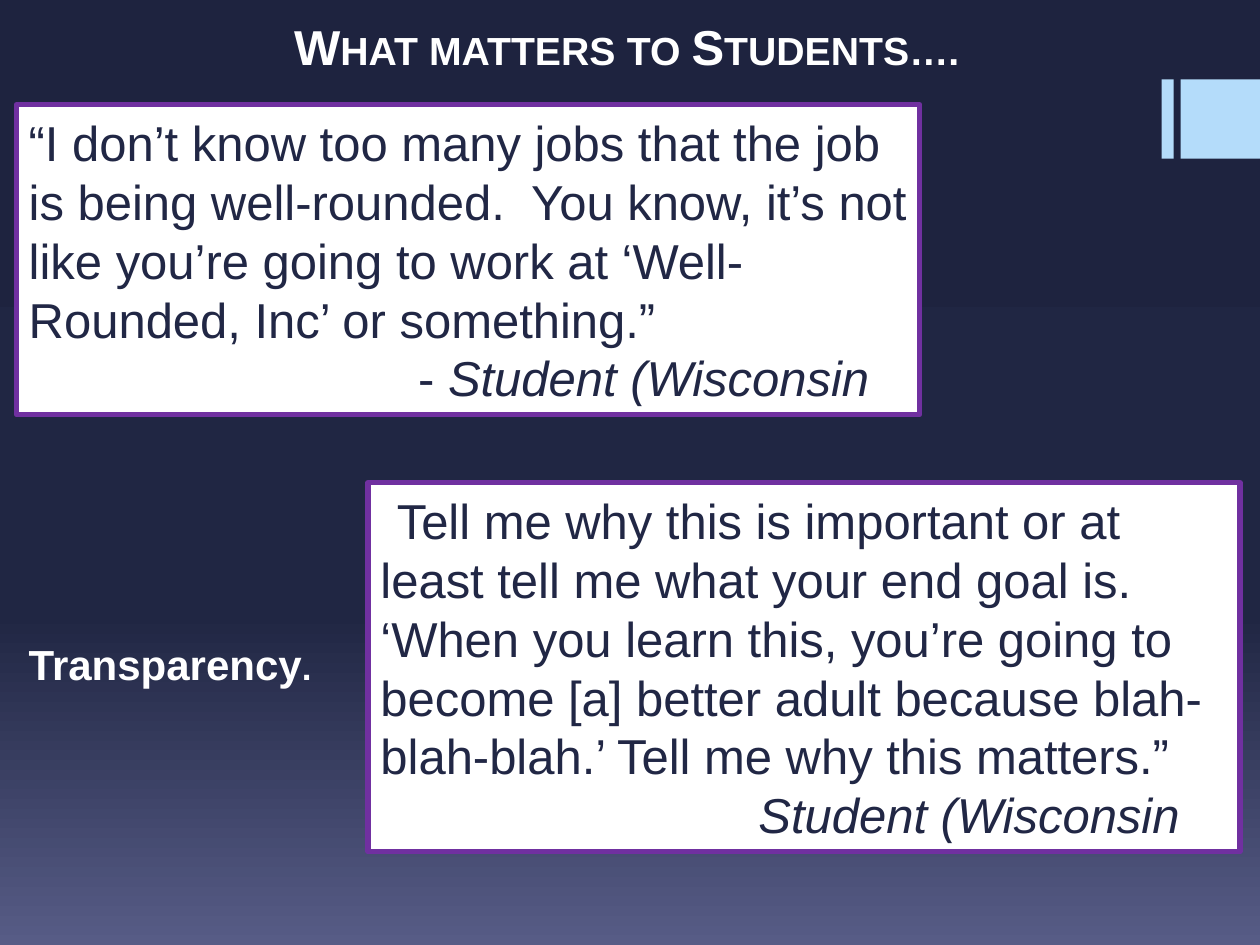
from copy import deepcopy

from pptx import Presentation
from pptx.dml.color import RGBColor
from pptx.enum import shapes, text
from pptx.oxml.ns import qn
from pptx.util import Cm, Pt

WHITE = RGBColor(0xFF, 0xFF, 0xFF)
NAVY = RGBColor(0x21, 0x27, 0x45)
PURPLE = RGBColor(0x70, 0x30, 0xA0)
SKY = RGBColor(0xB4, 0xDC, 0xFA)
FADE = [
    (0, RGBColor(0x1E, 0x23, 0x3F)),
    (0.65, RGBColor(0x20, 0x26, 0x43)),
    (1, RGBColor(0x57, 0x5C, 0x86)),
]

# Boxes are left, top, width, height in cm.
TITLE = ("What matters to Students….", (0.18, 0.2, 24.92, 1.45))
LABEL = ("Transparency", ".", (0.33, 12.75, 7.06, 1.27))
BARS = [(23.42, 1.6, 0.24, 1.6), (23.8, 1.6, 1.6, 1.6)]

# Each run is text and italic; first is the first-line indent of the quote
# and left the margin of the source line, both in cm.
QUOTES = [
    {
        "box": (0.33, 2.11, 18.21, 6.25),
        "quote": "“I don’t know too many jobs that the job is being "
                 "well-rounded.  You know, it’s not like you’re going to "
                 "work at ‘Well-Rounded, Inc’ or something.”",
        "first": 0,
        "source": [("- ", False), ("Student (Wisconsin", True)],
        "left": 7.85,
    },
    {
        "box": (7.42, 9.73, 17.58, 7.44),
        "quote": "Tell me why this is important or at least tell me what "
                 "your end goal is. ‘When you learn this, you’re going to "
                 "become [a] better adult because blah-blah-blah.’ Tell me "
                 "why this matters.”",
        "first": 0.33,
        "source": [("Student (Wisconsin", True)],
        "left": 7.62,
    },
]


def place(box):
    return [Cm(n) for n in box]


def setup(frame):
    frame.word_wrap = True
    frame.auto_size = text.MSO_AUTO_SIZE.NONE
    frame.vertical_anchor = text.MSO_ANCHOR.MIDDLE


def write(para, runs, size, color, bold=False, align=text.PP_ALIGN.LEFT):
    para.alignment = align
    for words, slant in runs:
        run = para.add_run()
        run.text = words
        font = run.font
        font.name, font.size = "Arial", Pt(size)
        font.bold, font.italic = bold, slant
        font.color.rgb = color


def indent(para, left, first):
    props = para._p.get_or_add_pPr()
    props.set("marL", str(Cm(left)))
    props.set("indent", str(Cm(first)))


def rect(slide, box, color):
    shape = slide.shapes.add_shape(shapes.MSO_SHAPE.RECTANGLE, *place(box))
    shape.shadow.inherit = False
    shape.fill.solid()
    shape.fill.fore_color.rgb = color
    shape.line.fill.background()
    return shape


def shade(slide):
    """Fill the background with the three-stop fade, top to bottom."""
    fill = slide.background.fill
    fill.gradient()
    fill.gradient_angle = 270
    stops = slide.element.find(".//" + qn("a:gsLst"))
    stops.append(deepcopy(stops[-1]))
    for stop, (pos, color) in zip(fill.gradient_stops, FADE):
        stop.position = pos
        stop.color.rgb = color


def add_title(slide):
    words, box = TITLE
    title = slide.shapes.title
    title.left, title.top, title.width, title.height = place(box)
    setup(title.text_frame)
    para = title.text_frame.paragraphs[0]
    write(para, [(words, False)], 28, WHITE, True, text.PP_ALIGN.CENTER)
    para.runs[0].font._element.set("cap", "small")


def add_quote(slide, item):
    shape = rect(slide, item["box"], WHITE)
    shape.line.color.rgb = PURPLE
    shape.line.width = Pt(3)
    frame = shape.text_frame
    setup(frame)
    quote, source = frame.paragraphs[0], frame.add_paragraph()
    write(quote, [(item["quote"], False)], 28, NAVY)
    indent(quote, 0, item["first"])
    write(source, item["source"], 28, NAVY)
    indent(source, item["left"], 0)


def add_label(slide):
    word, dot, box = LABEL
    frame = slide.shapes.add_textbox(*place(box)).text_frame
    setup(frame)
    para = frame.paragraphs[0]
    write(para, [(word, False), (dot, False)], 24, WHITE, True)
    para.runs[1].font.size = Pt(20)


def main():
    deck = Presentation()
    deck.slide_width, deck.slide_height = Cm(25.4), Cm(19.05)
    slide = deck.slides.add_slide(deck.slide_layouts[5])
    shade(slide)
    for box in BARS:
        rect(slide, box, SKY)
    for item in QUOTES:
        add_quote(slide, item)
    add_title(slide)
    add_label(slide)
    deck.save("out.pptx")


if __name__ == "__main__":
    main()
